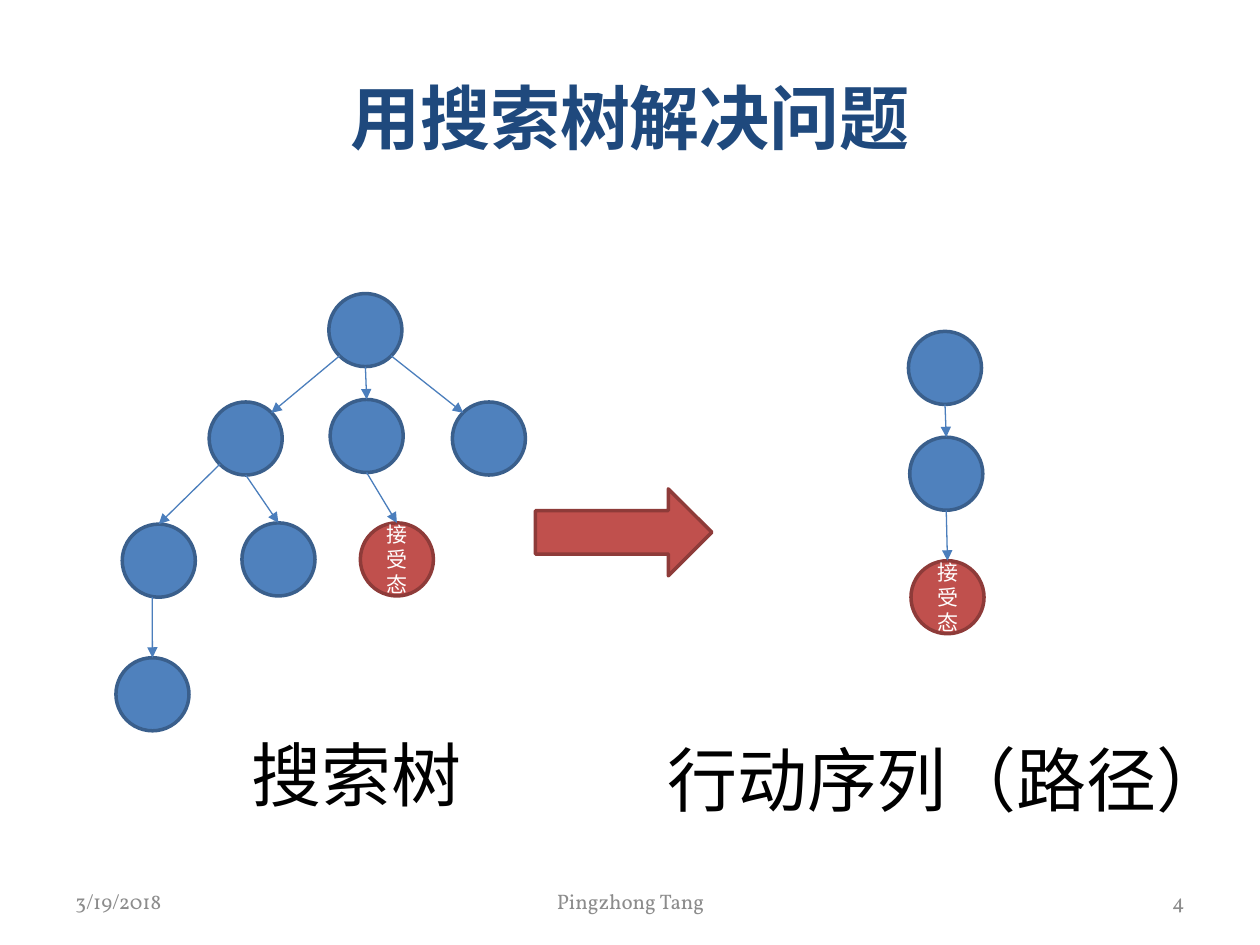
"""Build a slide showing a search tree turned into a path of actions."""
from lxml import etree
from pptx import Presentation
from pptx.dml.color import RGBColor
from pptx.enum.shapes import MSO_CONNECTOR, MSO_SHAPE
from pptx.enum.text import MSO_ANCHOR, MSO_AUTO_SIZE, PP_ALIGN
from pptx.oxml.ns import qn
from pptx.util import Inches, Pt

OVAL, ARROW = MSO_SHAPE.OVAL, MSO_SHAPE.RIGHT_ARROW
LINE, MIDDLE = MSO_CONNECTOR.STRAIGHT, MSO_ANCHOR.MIDDLE
LEFT, CENTER, RIGHT = PP_ALIGN.LEFT, PP_ALIGN.CENTER, PP_ALIGN.RIGHT
FIT = MSO_AUTO_SIZE.SHAPE_TO_FIT_TEXT

NAVY = RGBColor(0x1F, 0x49, 0x7D)
BLUE = RGBColor(0x4F, 0x81, 0xBD)
BLUE_RIM = RGBColor(0x3A, 0x5F, 0x8C)
EDGE = RGBColor(0x4B, 0x7E, 0xBC)
RED = RGBColor(0xC0, 0x50, 0x4D)
RED_RIM = RGBColor(0x8E, 0x3B, 0x39)
GRAY = RGBColor(0x8C, 0x8C, 0x8C)
WHITE = RGBColor(0xFF, 0xFF, 0xFF)
BLACK = RGBColor(0, 0, 0)

FONT = "Vollkorn"
SIZE = 0.58
GOAL = "接受态"
TOP, BOTTOM = (0.5, 0), (0.5, 1)
LOW_LEFT, LOW_RIGHT = (0.15, 0.85), (0.85, 0.85)
UP_LEFT, UP_RIGHT = (0.15, 0.15), (0.85, 0.15)

TREE = {
    "root": (2.61, 2.33),
    "a": (1.66, 3.19), "b": (2.62, 3.17), "c": (3.59, 3.19),
    "aa": (0.97, 4.16), "ab": (1.92, 4.15), "goal": (2.86, 4.15),
    "leaf": (0.92, 5.22),
}
TREE_EDGES = [
    ("root", LOW_LEFT, "a", UP_RIGHT), ("root", BOTTOM, "b", TOP),
    ("root", LOW_RIGHT, "c", UP_LEFT), ("a", LOW_LEFT, "aa", TOP),
    ("a", BOTTOM, "ab", TOP), ("b", BOTTOM, "goal", TOP),
    ("aa", (0.41, 1), "leaf", TOP),
]
PATH = {"root": (7.21, 2.63), "b": (7.22, 3.47), "goal": (7.23, 4.45)}
PATH_EDGES = [("root", BOTTOM, "b", TOP), ("b", BOTTOM, "goal", TOP)]


def write(frame, text, size, color, align=CENTER, bold=False):
    """Fill a text frame with one styled paragraph."""
    frame.text = text
    para = frame.paragraphs[0]
    para.alignment = align
    font = para.font
    font.name, font.size, font.bold = FONT, Pt(size), bold
    font.color.rgb = color


def add_form(shapes, kind, box, fill, rim):
    """Add a filled preset shape with a darker rim."""
    form = shapes.add_shape(kind, *map(Inches, box))
    form.shadow.inherit = False
    form.fill.solid()
    form.fill.fore_color.rgb = fill
    form.line.color.rgb = rim
    form.line.width = Pt(2)
    return form


def add_edge(shapes, start, end):
    """Add a thin line with an arrowhead at its end."""
    edge = shapes.add_connector(LINE, *map(Inches, start + end))
    edge.line.color.rgb = EDGE
    edge.line.width = Pt(0.75)
    head = etree.SubElement(edge.line._get_or_add_ln(), qn("a:tailEnd"))
    head.set("type", "triangle")
    etree.SubElement(edge._element.spPr, qn("a:effectLst"))


def add_graph(shapes, nodes, edges):
    """Draw round nodes, the goal in red, and the edges between them."""
    for name, spot in nodes.items():
        goal = name == "goal"
        colors = (RED, RED_RIM) if goal else (BLUE, BLUE_RIM)
        node = add_form(shapes, OVAL, spot + (SIZE, SIZE), *colors)
        if goal:
            node.text_frame.vertical_anchor = MIDDLE
            write(node.text_frame, GOAL, 12, WHITE)
    for source, exit_, target, entry in edges:
        ends = [tuple(p + SIZE * s for p, s in zip(nodes[name], share))
                for name, share in ((source, exit_), (target, entry))]
        add_edge(shapes, *ends)


def add_label(shapes, text, box):
    """Add a large caption that does not wrap."""
    frame = shapes.add_textbox(*map(Inches, box)).text_frame
    frame.word_wrap = False
    frame.auto_size = FIT
    write(frame, text, 40, BLACK)


def add_footer(shapes, text, left, width, align):
    """Add one grey footer entry."""
    box = shapes.add_textbox(*map(Inches, (left, 6.95, width, 0.4)))
    box.text_frame.word_wrap = True
    box.text_frame.vertical_anchor = MIDDLE
    write(box.text_frame, text, 12, GRAY, align)


def add_title(slide, text):
    """Place and style the title."""
    title = slide.shapes.title
    title.left, title.top, title.width, title.height = map(
        Inches, (0.5, 0.3, 9, 1.25))
    title.text_frame.vertical_anchor = MIDDLE
    write(title.text_frame, text, 40, NAVY, bold=True)


def main():
    """Build and save the slide."""
    deck = Presentation()
    deck.slide_width, deck.slide_height = Inches(10), Inches(7.5)
    slide = deck.slides.add_slide(deck.slide_layouts[5])
    shapes = slide.shapes
    add_title(slide, "用搜索树解决问题")
    add_footer(shapes, "3/19/2018", 0.5, 2.33, LEFT)
    add_footer(shapes, "4", 7.17, 2.33, RIGHT)
    add_footer(shapes, "Pingzhong Tang", 3.42, 3.17, CENTER)
    tree = shapes.add_group_shape().shapes
    add_graph(tree, TREE, TREE_EDGES)
    add_label(tree, "搜索树", (1.89, 5.76, 1.88, 0.77))
    add_form(shapes, ARROW, (4.25, 3.88, 1.4, 0.69), RED, RED_RIM)
    add_graph(shapes.add_group_shape().shapes, PATH, PATH_EDGES)
    add_label(shapes, "行动序列（路径）", (5.17, 5.8, 4.69, 0.77))
    deck.save("out.pptx")


if __name__ == "__main__":
    main()
